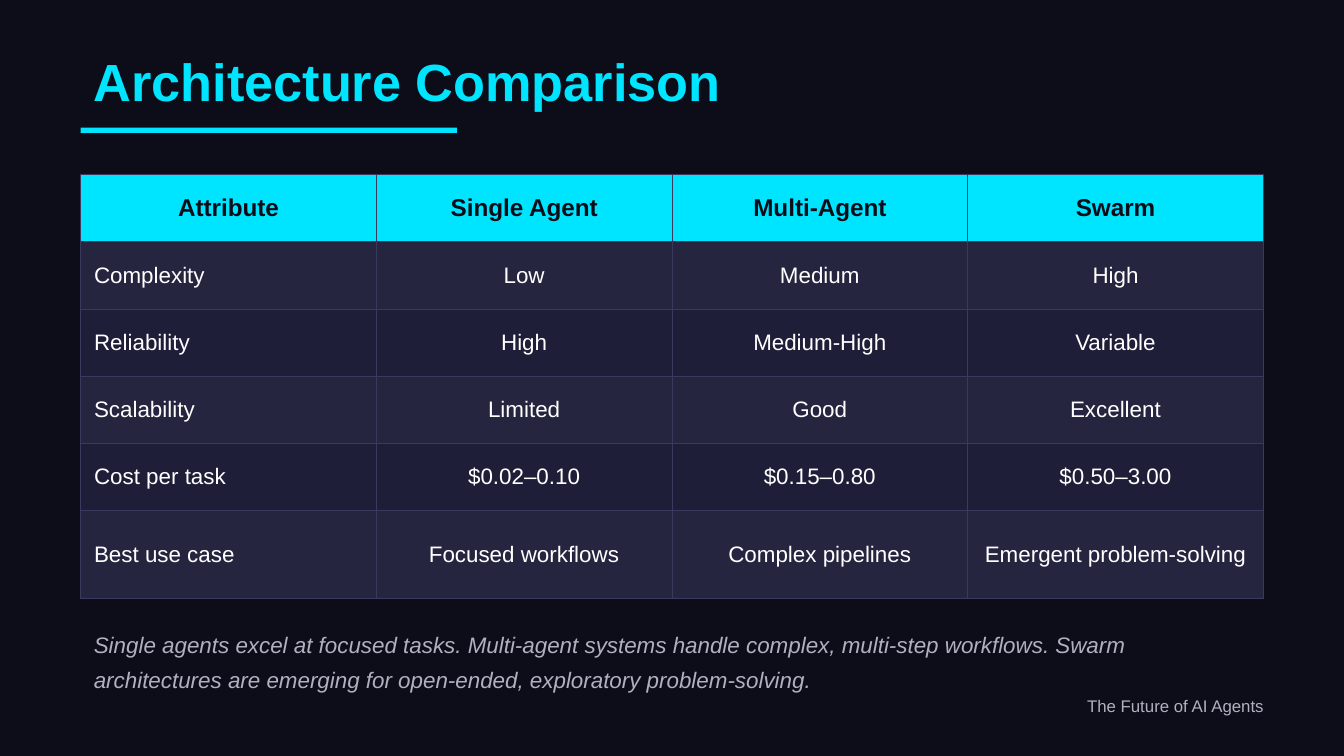
from lxml import etree
from pptx import Presentation
from pptx.dml.color import RGBColor
from pptx.enum import shapes, text
from pptx.oxml import ns
from pptx.util import Inches, Pt

COLORS = {
    "background": "0D0D1A",
    "accent": "00E5FF",
    "body": "FFFFFF",
    "muted": "B0B0C0",
    "odd_row": "252540",
    "even_row": "1E1E38",
    "border": "3A3A5C",
}
FONT = "Arial"
LEFT, WIDTH = 0.6, 8.8
TITLE = "Architecture Comparison"
ROWS = [
    ("Attribute", "Single Agent", "Multi-Agent", "Swarm"),
    ("Complexity", "Low", "Medium", "High"),
    ("Reliability", "High", "Medium-High", "Variable"),
    ("Scalability", "Limited", "Good", "Excellent"),
    ("Cost per task", "$0.02–0.10", "$0.15–0.80", "$0.50–3.00"),
    ("Best use case", "Focused workflows", "Complex pipelines", "Emergent problem-solving"),
]
ROW_HEIGHTS = [0.5] * 5 + [0.65]
SUMMARY = (
    "Single agents excel at focused tasks. Multi-agent systems handle complex, "
    "multi-step workflows. Swarm architectures are emerging for open-ended, "
    "exploratory problem-solving."
)
FOOTER = "The Future of AI Agents"


def color(name):
    return RGBColor.from_string(COLORS[name])


def paint(target, name):
    target.fill.solid()
    target.fill.fore_color.rgb = color(name)


def write(frame, words, size, name, align=text.PP_ALIGN.LEFT, bold=False, italic=False):
    frame.text = words
    para = frame.paragraphs[0]
    para.alignment = align
    font = para.runs[0].font
    font.name, font.size, font.color.rgb = FONT, Pt(size), color(name)
    font.bold, font.italic = bold, italic
    return para


def add_text(page, left, top, width, height, *content, **style):
    box = page.shapes.add_textbox(*map(Inches, (left, top, width, height)))
    frame = box.text_frame
    frame.word_wrap = True
    frame.vertical_anchor = text.MSO_ANCHOR.MIDDLE
    return write(frame, *content, **style)


def add_borders(cell):
    properties = cell._tc.get_or_add_tcPr()
    for index, side in enumerate(("lnL", "lnR", "lnT", "lnB")):
        line = etree.Element(ns.qn(f"a:{side}"), w=str(Pt(0.5)))
        fill = etree.SubElement(line, ns.qn("a:solidFill"))
        etree.SubElement(fill, ns.qn("a:srgbClr"), val=COLORS["border"])
        properties.insert(index, line)


def add_comparison(page):
    frame = page.shapes.add_table(
        len(ROWS), len(ROWS[0]), Inches(LEFT), Inches(1.3), Inches(WIDTH), Inches(sum(ROW_HEIGHTS))
    )
    table = frame.table
    for column in table.columns:
        column.width = Inches(WIDTH / len(ROWS[0]))
    for r, (labels, height) in enumerate(zip(ROWS, ROW_HEIGHTS)):
        table.rows[r].height = Inches(height)
        header = r == 0
        row_fill = "accent" if header else "odd_row" if r % 2 else "even_row"
        for c, label in enumerate(labels):
            cell = table.cell(r, c)
            paint(cell, row_fill)
            add_borders(cell)
            cell.vertical_anchor = text.MSO_ANCHOR.MIDDLE
            write(
                cell.text_frame,
                label,
                13 if header else 12,
                "background" if header else "body",
                align=text.PP_ALIGN.CENTER if header or c else text.PP_ALIGN.LEFT,
                bold=header,
            )


def main():
    deck = Presentation()
    deck.slide_width = Inches(10)
    deck.slide_height = deck.slide_width * 9 // 16
    page = deck.slides.add_slide(deck.slide_layouts[6])
    paint(page.background, "background")

    add_text(page, LEFT, 0.3, WIDTH, 0.6, TITLE, 28, "accent", bold=True)
    underline = page.shapes.add_shape(
        shapes.MSO_SHAPE.RECTANGLE, Inches(LEFT), Inches(0.95), Inches(2.8), Inches(0.04)
    )
    underline.shadow.inherit = False
    paint(underline, "accent")
    underline.line.fill.background()

    add_comparison(page)
    summary = add_text(page, LEFT, 4.6, WIDTH, 0.6, SUMMARY, 12, "muted", italic=True)
    summary.line_spacing = 1.3
    add_text(page, 0.5, 5.1, 9, 0.3, FOOTER, 9, "muted", align=text.PP_ALIGN.RIGHT)
    deck.save("out.pptx")


if __name__ == "__main__":
    main()
